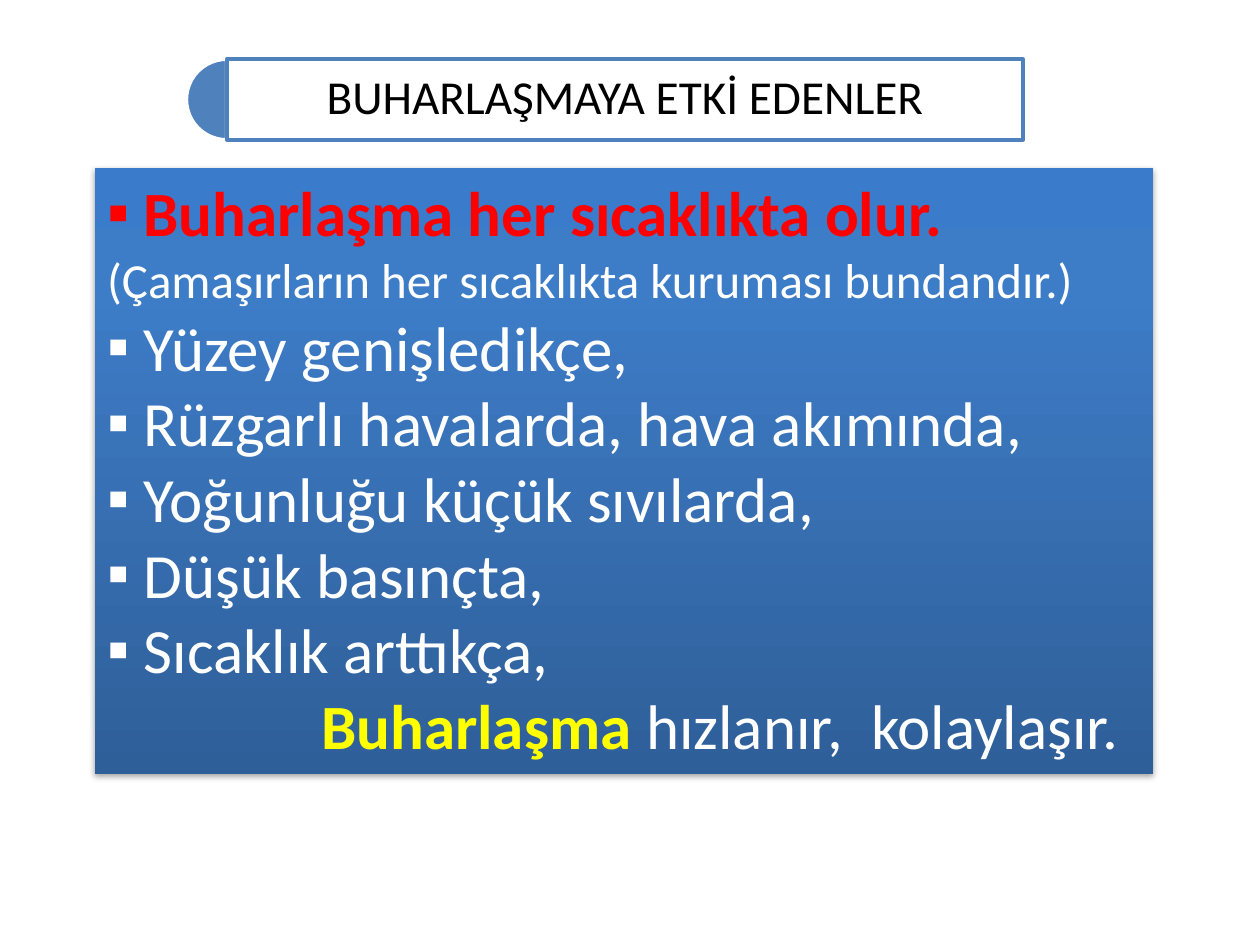
import pptx
import pptx.util
import pptx.dml.color
import pptx.enum.shapes
import pptx.enum.text
import pptx.oxml
import pptx.oxml.ns

Inches = pptx.util.Inches
Pt = pptx.util.Pt
RGBColor = pptx.dml.color.RGBColor

WHITE = RGBColor(0xFF, 0xFF, 0xFF)
BLACK = RGBColor(0x00, 0x00, 0x00)
RED = RGBColor(0xFF, 0x00, 0x00)
YELLOW = RGBColor(0xFF, 0xFF, 0x00)
BLUE = RGBColor(0x4F, 0x81, 0xBD)
DEEP_BLUE = RGBColor(0x2F, 0x5F, 0x99)
MID_BLUE = RGBColor(0x3D, 0x7C, 0xC7)
LIGHT_BLUE = RGBColor(0x3A, 0x7C, 0xCB)
PANEL_STOPS = [(0, DEEP_BLUE), (80, MID_BLUE), (100, LIGHT_BLUE)]

FONT = "Calibri"
BULLET_INDENT = Inches(0.29)
CONCLUSION_INDENT = Inches(1.7)

TITLE = "BUHARLAŞMAYA ETKİ EDENLER"
RULE = "Buharlaşma her sıcaklıkta olur."
EXAMPLE = "(Çamaşırların her sıcaklıkta kuruması bundandır.)"
FACTORS = [
    "Yüzey genişledikçe,",
    "Rüzgarlı havalarda, hava akımında,",
    "Yoğunluğu küçük sıvılarda,",
    "Düşük basınçta,",
    "Sıcaklık arttıkça,",
]


def place(shape, box):
    shape.left, shape.top, shape.width, shape.height = box


def add_run(paragraph, text, size, color, bold=False):
    run = paragraph.add_run()
    run.text = text
    run.font.name = FONT
    run.font.size = Pt(size)
    run.font.bold = bold
    run.font.color.rgb = color


def add_line(text_frame, runs, bullet=False, indent=0):
    first = text_frame.paragraphs[0]
    paragraph = text_frame.add_paragraph() if first.runs else first
    paragraph.space_before = paragraph.space_after = Pt(0)
    properties = paragraph._p.get_or_add_pPr()
    properties.set("marL", str(BULLET_INDENT if bullet else indent))
    properties.set("indent", str(-BULLET_INDENT if bullet else 0))
    mark = 'a:buChar char="▪"' if bullet else "a:buNone"
    namespace = pptx.oxml.ns.nsdecls("a")
    properties.append(pptx.oxml.parse_xml(f"<{mark} {namespace}/>".replace(
        f'{mark} ', f'{mark} ')))
    for run in runs:
        add_run(paragraph, *run)


def style_panel(shape):
    namespace = pptx.oxml.ns.nsdecls("a")
    stops = "".join(
        f'<a:gs pos="{share * 1000}"><a:srgbClr val="{color}"/></a:gs>'
        for share, color in PANEL_STOPS
    )
    gradient = (
        f'<a:gradFill {namespace} rotWithShape="1"><a:gsLst>{stops}</a:gsLst>'
        '<a:lin ang="16200000" scaled="0"/></a:gradFill>'
    )
    shadow = (
        f'<a:effectLst {namespace}><a:outerShdw blurRad="{Pt(3.1)}" '
        f'dist="{Pt(1.8)}" dir="5400000" rotWithShape="0">'
        f'<a:srgbClr val="{BLACK}"><a:alpha val="35000"/></a:srgbClr>'
        '</a:outerShdw></a:effectLst>'
    )
    for part in (gradient, shadow):
        shape._element.spPr.append(pptx.oxml.parse_xml(part))


def build_heading(slide, box):
    left, top, width, height = box
    radius = height // 2
    title = slide.shapes.title
    place(title, (left + radius, top, width - radius, height))
    title.fill.solid()
    title.fill.fore_color.rgb = WHITE
    title.line.color.rgb = BLUE
    title.line.width = Pt(2)
    text_frame = title.text_frame
    text_frame.word_wrap = True
    text_frame.auto_size = pptx.enum.text.MSO_AUTO_SIZE.NONE
    text_frame.vertical_anchor = pptx.enum.text.MSO_ANCHOR.MIDDLE
    text_frame.margin_left = text_frame.margin_right = Inches(0.11)
    text_frame.margin_top = text_frame.margin_bottom = Inches(0.11)
    paragraph = text_frame.paragraphs[0]
    paragraph.alignment = pptx.enum.text.PP_ALIGN.CENTER
    paragraph.line_spacing = 0.9
    add_run(paragraph, TITLE, 27, BLACK)

    half_disc = slide.shapes.add_shape(
        pptx.enum.shapes.MSO_SHAPE.PIE, left, top, height, height
    )
    half_disc.adjustments[0] = 54
    half_disc.adjustments[1] = 162
    half_disc.shadow.inherit = False
    half_disc.fill.solid()
    half_disc.fill.fore_color.rgb = BLUE
    half_disc.line.color.rgb = WHITE
    half_disc.line.width = Pt(2)
    title._element.addprevious(half_disc._element)


def build_factors(slide, box):
    body = slide.placeholders[1]
    place(body, box)
    style_panel(body)
    text_frame = body.text_frame
    text_frame.word_wrap = True
    text_frame.auto_size = pptx.enum.text.MSO_AUTO_SIZE.NONE
    text_frame.vertical_anchor = pptx.enum.text.MSO_ANCHOR.TOP
    add_line(text_frame, [(RULE, 36, RED, True)], bullet=True)
    add_line(text_frame, [(EXAMPLE, 28, WHITE)])
    for factor in FACTORS:
        add_line(text_frame, [(factor, 36, WHITE)], bullet=True)
    conclusion = [
        ("Buharlaşma ", 36, YELLOW, True),
        ("hızlanır,  kolaylaşır.", 36, WHITE),
    ]
    add_line(text_frame, conclusion, indent=CONCLUSION_INDENT)


def main():
    presentation = pptx.Presentation()
    presentation.slide_width = Inches(10)
    presentation.slide_height = Inches(7.5)
    slide = presentation.slides.add_slide(presentation.slide_layouts[1])
    build_heading(slide, (Inches(1.48), Inches(0.47), Inches(6.64), Inches(0.64)))
    build_factors(slide, (Inches(0.75), Inches(1.33), Inches(8.4), Inches(4.81)))
    presentation.save("out.pptx")


if __name__ == "__main__":
    main()
